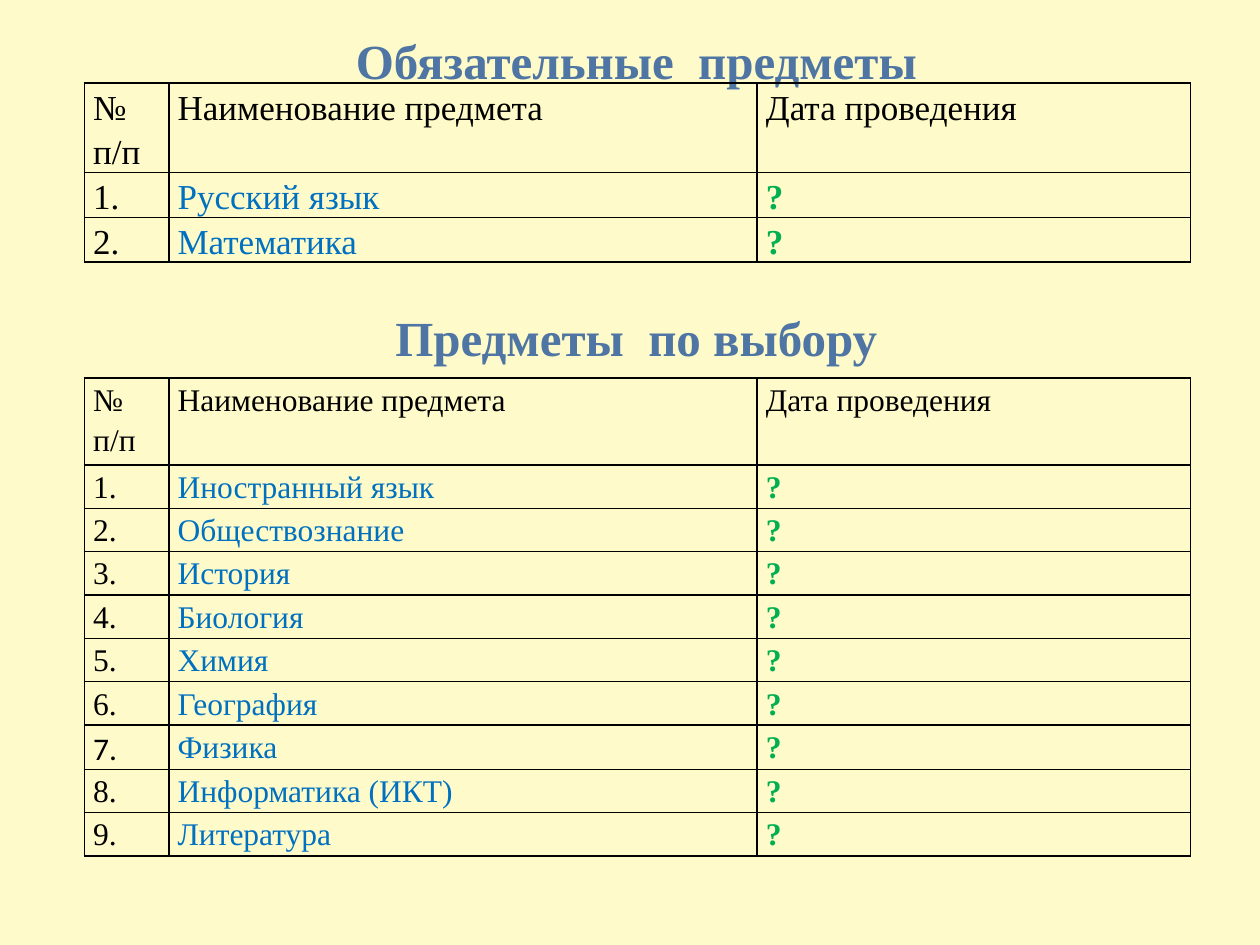
from lxml import etree
from pptx import Presentation
from pptx.dml.color import RGBColor
from pptx.enum import text
from pptx.oxml import ns
from pptx.util import Inches, Pt

CREAM = RGBColor(0xFE, 0xFA, 0xC9)
BLACK = RGBColor(0, 0, 0)
STEEL = RGBColor(0x4E, 0x75, 0xA3)
BLUE = RGBColor(0x00, 0x70, 0xC0)
GREEN = RGBColor(0x00, 0xB0, 0x50)
SERIF = "Times New Roman"
HEAD = ["№ п/п", "Наименование предмета", "Дата проведения"]
WIDTHS = [0.67, 4.67, 3.44]


def add_run(para, words, size, color, bold=False, face=SERIF):
    run = para.add_run()
    run.text = words
    font = run.font
    font.name, font.size, font.bold = face, Pt(size), bold
    font.color.rgb = color


def add_edges(cell):
    props = cell._tc.get_or_add_tcPr()
    for i, side in enumerate(["lnL", "lnR", "lnT", "lnB"]):
        line = etree.Element(ns.qn("a:" + side), w=str(Pt(1)))
        fill = etree.SubElement(line, ns.qn("a:solidFill"))
        etree.SubElement(fill, ns.qn("a:srgbClr"), val=str(BLACK))
        props.insert(i, line)


deck = Presentation()
deck.slide_width, deck.slide_height = Inches(10), Inches(7.5)
slide = deck.slides.add_slide(deck.slide_layouts[5])
slide.background.fill.solid()
slide.background.fill.fore_color.rgb = CREAM

title = slide.shapes.title
label = slide.shapes.add_textbox(0, 0, 0, 0)
for box, top, words in [
    (title, 0.19, "Обязательные  предметы"),
    (label, 2.39, "Предметы  по выбору"),
]:
    box.left, box.top = Inches(1.33), Inches(top)
    box.width, box.height = Inches(7.44), Inches(0.55)
    frame = box.text_frame
    frame.word_wrap = True
    frame.auto_size = text.MSO_AUTO_SIZE.NONE
    frame.vertical_anchor = text.MSO_ANCHOR.TOP
    para = frame.paragraphs[0]
    para.alignment = text.PP_ALIGN.CENTER
    add_run(para, words, 28, STEEL, True)

core = ["Русский язык", "Математика"]
extra = ["Иностранный язык", "Обществознание", "История", "Биология", "Химия",
         "География", "Физика", "Информатика (ИКТ)", "Литература"]

for top, high, first, size, names in [
    (0.66, 1.42, 0.71, 20, core),
    (3, 3.79, 0.69, 18, extra),
]:
    rows = [HEAD] + [[f"{n}.", name, "?"] for n, name in enumerate(names, 1)]
    table = slide.shapes.add_table(
        len(rows), len(HEAD), Inches(0.67), Inches(top),
        Inches(sum(WIDTHS)), Inches(high)).table
    table.first_row = table.horz_banding = False
    for col, width in zip(table.columns, WIDTHS):
        col.width = Inches(width)
    for r, row in enumerate(rows):
        table.rows[r].height = Inches((high - first) / len(names) if r else first)
        for c, words in enumerate(row):
            cell = table.cell(r, c)
            cell.margin_left = cell.margin_right = Inches(0.07)
            cell.margin_top = cell.margin_bottom = 0
            cell.fill.background()
            add_edges(cell)
            para = cell.text_frame.paragraphs[0]
            para.line_spacing = 1.15
            color = [BLACK, BLUE, GREEN][c] if r else BLACK
            face = "Calibri" if words == "7." else SERIF
            add_run(para, words, size, color, words == "?", face)

deck.save("out.pptx")
